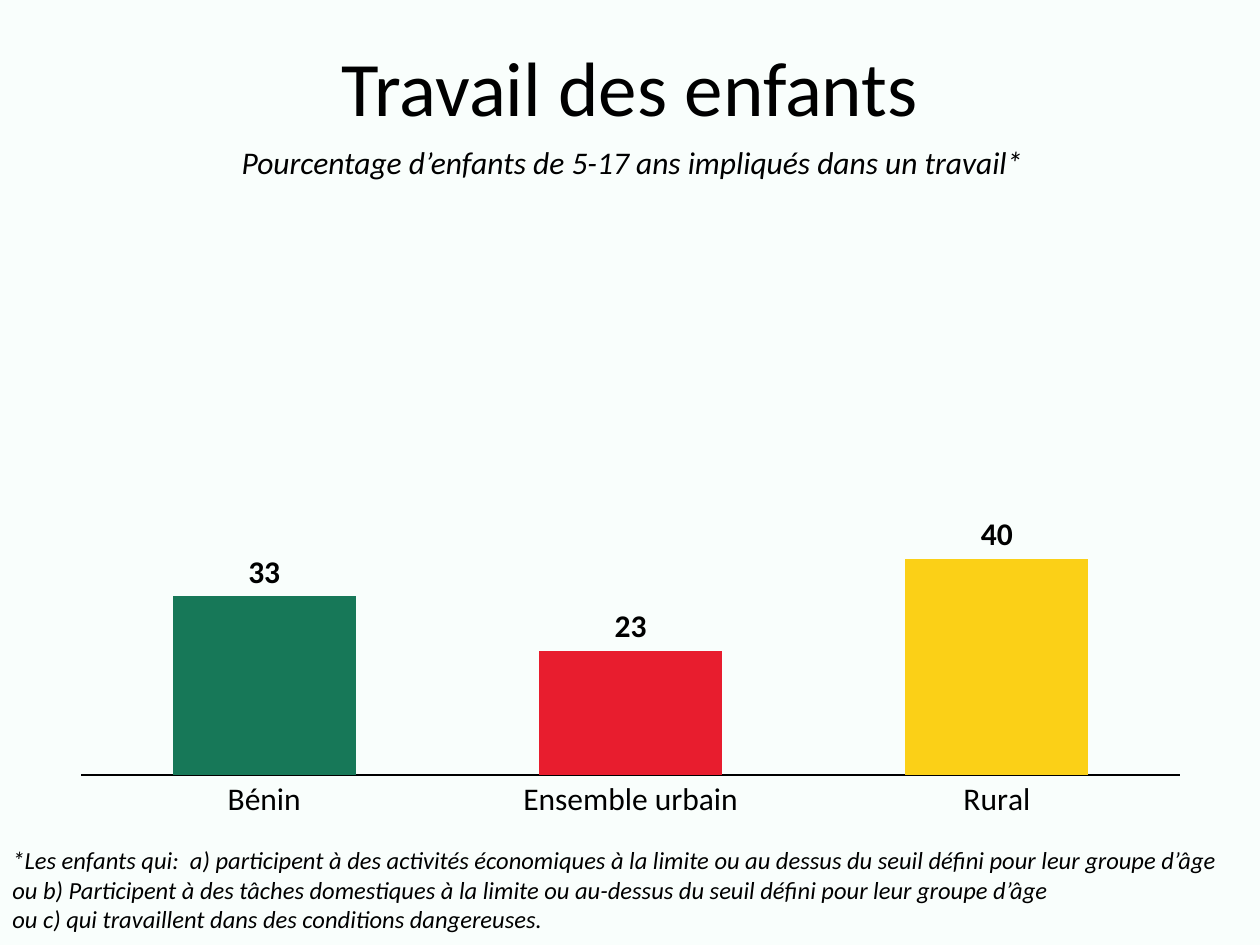
from dataclasses import dataclass

import lxml.etree
import pptx
import pptx.chart.data
import pptx.dml.color
import pptx.enum.chart
import pptx.enum.text
import pptx.oxml
import pptx.oxml.ns
import pptx.util


@dataclass(frozen=True)
class Theme:
    font: str = "Calibri"
    background: str = "F9FEFC"
    ink: str = "000000"
    bars: tuple = ("177858", "E81D2E", "FBD017")
    title: int = 44
    label: int = 18
    note: int = 14


THEME = Theme()
WIDTH, HEIGHT = pptx.util.Inches(10), pptx.util.Inches(7.5)
ALIGN = pptx.enum.text.PP_ALIGN
RESULTS = {"Bénin": 33, "Ensemble urbain": 23, "Rural": 40}
SUBTITLE = "Pourcentage d’enfants de 5-17 ans impliqués dans un travail*"
NOTES = [
    "*Les enfants qui:  a) participent à des activités économiques à la limite ou au dessus du seuil défini pour leur groupe d’âge",
    "ou b) Participent à des tâches domestiques à la limite ou au-dessus du seuil défini pour leur groupe d’âge",
    "ou c) qui travaillent dans des conditions dangereuses.",
]


def rgb(value):
    return pptx.dml.color.RGBColor.from_string(value)


def area(left, top, width, height):
    return [round(share * side) for share, side in
            zip((left, top, width, height), (WIDTH, HEIGHT, WIDTH, HEIGHT))]


def style_font(font, size, bold=False, italic=False):
    font.name = THEME.font
    font.size = pptx.util.Pt(size)
    font.color.rgb = rgb(THEME.ink)
    font.bold = bold
    font.italic = italic


def write_lines(tf, lines, size, align, italic=False):
    for i, line in enumerate(lines):
        p = tf.paragraphs[0] if i == 0 else tf.add_paragraph()
        p.alignment = align
        r = p.add_run()
        r.text = line
        style_font(r.font, size, italic=italic)


def set_title(s, text, box):
    sp = s.shapes.title
    sp.left, sp.top, sp.width, sp.height = box
    tf = sp.text_frame
    tf.vertical_anchor = pptx.enum.text.MSO_ANCHOR.MIDDLE
    write_lines(tf, [text], THEME.title, ALIGN.CENTER)
    tf.paragraphs[0].line_spacing = 0.9


def add_caption(s, lines, box, size, align):
    tf = s.shapes.add_textbox(*box).text_frame
    tf.word_wrap = True
    tf.auto_size = pptx.enum.text.MSO_AUTO_SIZE.SHAPE_TO_FIT_TEXT
    write_lines(tf, lines, size, align, italic=True)


def set_plot_layout(chart, x, y, w, h):
    qn = pptx.oxml.ns.qn
    plot_area = chart.plots[0]._element.getparent()
    for old in plot_area.findall(qn("c:layout")):
        plot_area.remove(old)
    layout = lxml.etree.Element(qn("c:layout"))
    manual = lxml.etree.SubElement(layout, qn("c:manualLayout"))
    settings = {"layoutTarget": "inner", "xMode": "edge", "yMode": "edge",
                "x": x, "y": y, "w": w, "h": h}
    for tag, value in settings.items():
        lxml.etree.SubElement(manual, qn(f"c:{tag}")).set("val", str(value))
    plot_area.insert(0, layout)


def style_axes(chart):
    value_axis = chart.value_axis
    value_axis.minimum_scale, value_axis.maximum_scale = 0, 100
    value_axis.has_major_gridlines = False
    value_axis.visible = False
    axis = chart.category_axis
    axis.major_tick_mark = pptx.enum.chart.XL_TICK_MARK.NONE
    axis.format.line.color.rgb = rgb(THEME.ink)
    axis.format.line.width = pptx.util.Pt(0.75)
    style_font(axis.tick_labels.font, THEME.label)


def add_column_chart(s, results, box):
    data = pptx.chart.data.CategoryChartData()
    data.categories = list(results)
    data.add_series("Series 1", list(results.values()))
    kind = pptx.enum.chart.XL_CHART_TYPE.COLUMN_CLUSTERED
    chart = s.shapes.add_chart(kind, *box, data).chart
    chart.has_legend = False
    chart.has_title = False
    style_font(chart.font, 10)
    style_axes(chart)
    plot = chart.plots[0]
    plot.gap_width = 100
    plot.vary_by_categories = False
    series = plot.series[0]
    for i, color in enumerate(THEME.bars):
        fill = series.points[i].format.fill
        fill.solid()
        fill.fore_color.rgb = rgb(color)
    labels = series.data_labels
    labels.show_value = True
    labels.position = pptx.enum.chart.XL_LABEL_POSITION.OUTSIDE_END
    style_font(labels.font, THEME.label, bold=True)
    set_plot_layout(chart, 0.017, 0.138, 0.966, 0.771)


def main():
    prs = pptx.Presentation()
    prs.slide_width, prs.slide_height = WIDTH, HEIGHT
    s = prs.slides.add_slide(prs.slide_layouts[5])
    s.background.fill.solid()
    s.background.fill.fore_color.rgb = rgb(THEME.background)
    set_title(s, "Travail des enfants", area(0, 0, 1, 0.193))
    add_caption(s, [SUBTITLE], area(0.002, 0.145, 1, 0.053), THEME.label, ALIGN.CENTER)
    add_caption(s, NOTES, area(0, 0.888, 1, 0.108), THEME.note, ALIGN.LEFT)
    add_column_chart(s, RESULTS, area(0.049, 0.145, 0.903, 0.743))
    prs.save("out.pptx")


if __name__ == "__main__":
    main()
